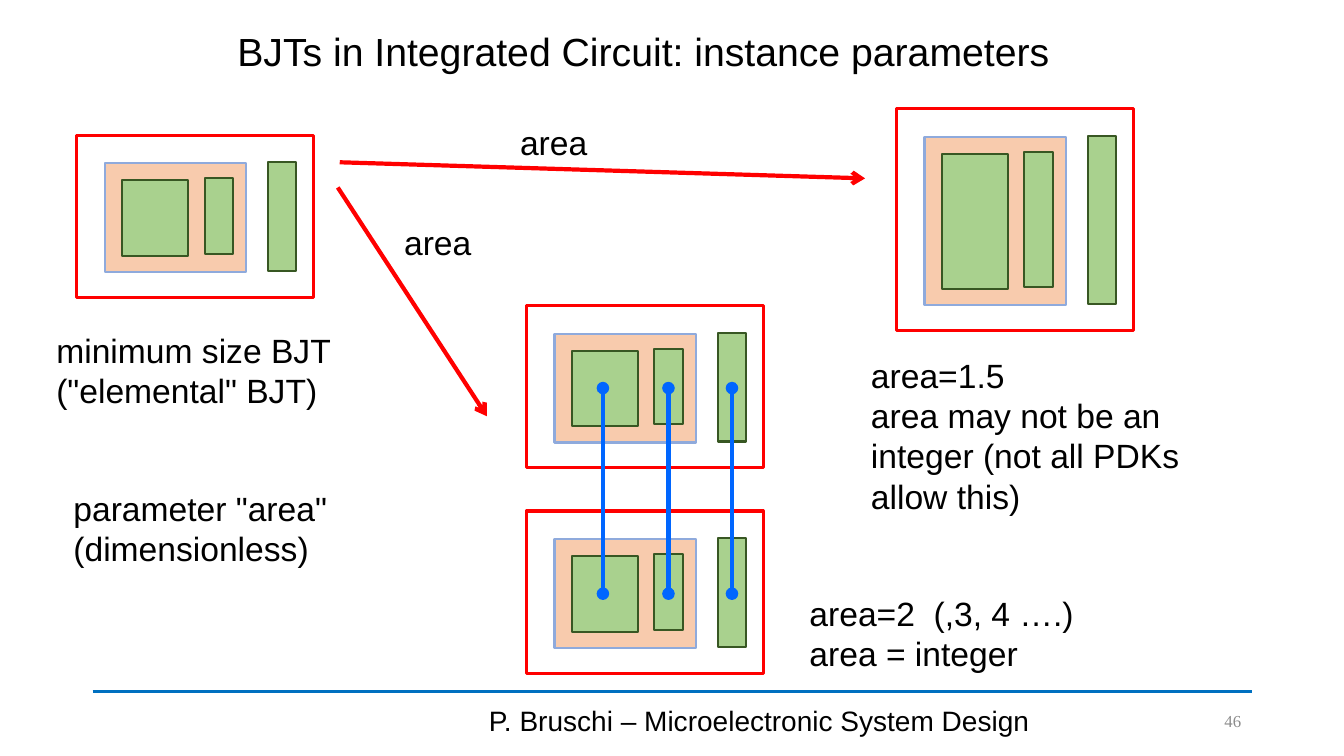
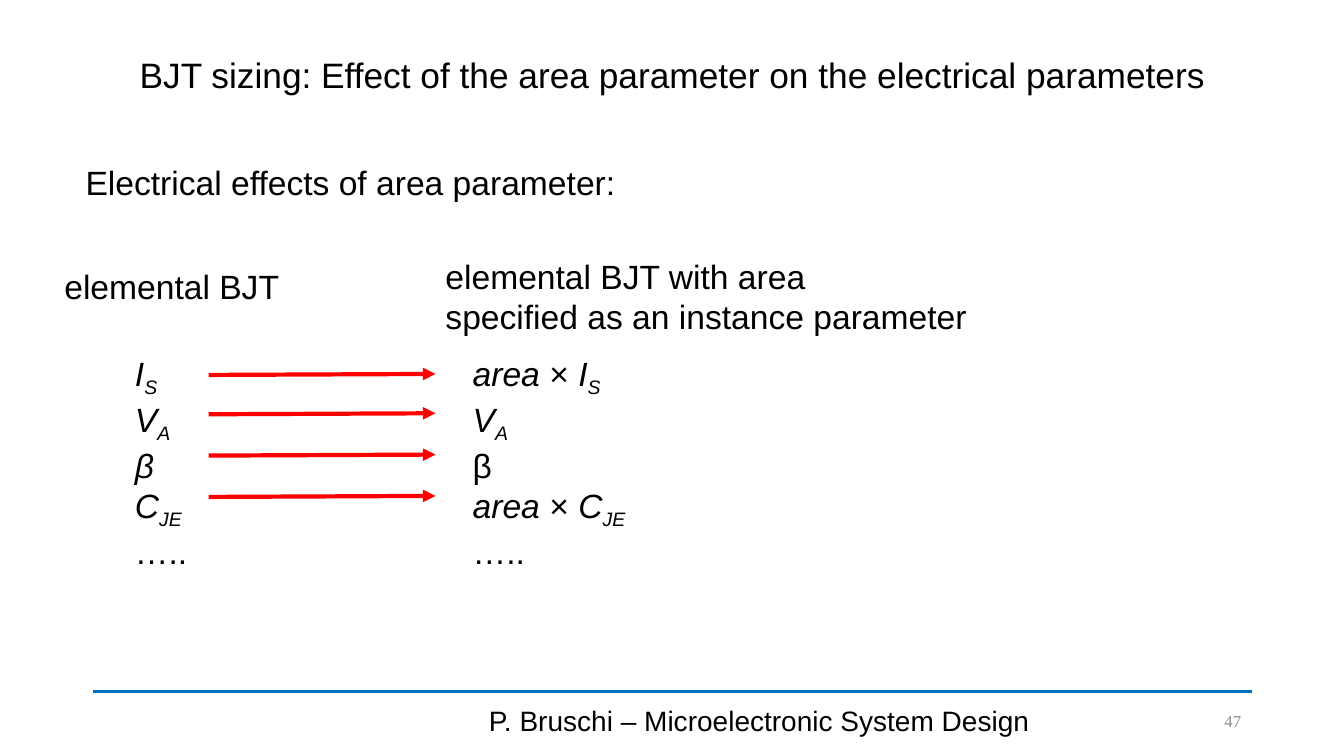
from lxml.etree import SubElement
from pptx import Presentation
from pptx.dml.color import RGBColor
from pptx.enum.shapes import MSO_CONNECTOR, MSO_SHAPE
from pptx.enum.text import MSO_ANCHOR, MSO_AUTO_SIZE, PP_ALIGN
from pptx.oxml.ns import qn
from pptx.util import Pt

PX = 9144
COLORS = {
    "text": "000000", "number": "8C8C8C", "rule": "0070C0",
    "frame": "FF0000", "arrow": "FF0000", "wire": "0066FF",
    "well": "F8CBAD", "well_edge": "8FAADC",
    "contact": "A9D18E", "contact_edge": "385723",
}
FOOTER = "P. Bruschi – Microelectronic System Design"


def px(*lengths):
    """Turn px lengths into EMU."""
    return [length * PX for length in lengths]


def rgb(name):
    """Look up a palette colour."""
    return RGBColor.from_string(COLORS[name])


def write(frame, lines, size=24, font="Arial", color="text",
          align=PP_ALIGN.LEFT, anchor=MSO_ANCHOR.TOP, wrap=False, spacing=None):
    """Fill a frame; a line is a string or (text, style) pairs, i italic and s subscript."""
    frame.word_wrap = wrap
    frame.auto_size = MSO_AUTO_SIZE.NONE if wrap else MSO_AUTO_SIZE.SHAPE_TO_FIT_TEXT
    frame.vertical_anchor = anchor
    for index, line in enumerate(lines):
        paragraph = frame.add_paragraph() if index else frame.paragraphs[0]
        paragraph.alignment = align
        if spacing:
            paragraph.line_spacing = spacing
        for text, style in [(line, "")] if isinstance(line, str) else line:
            run = paragraph.add_run()
            run.text = text
            run.font.size = Pt(size)
            run.font.name = font
            run.font.color.rgb = rgb(color)
            run.font.italic = "i" in style
            if "s" in style:
                run.font._element.set("baseline", "-25000")


def add_text(slide, box, *lines, **style):
    """Add a text box at a px box."""
    write(slide.shapes.add_textbox(*px(*box)).text_frame, lines, **style)


def add_line(slide, start, end, color, width=3, head=None, tail=None):
    """Add a straight line with optional end marks."""
    line = slide.shapes.add_connector(MSO_CONNECTOR.STRAIGHT, *px(*start, *end))
    line.line.color.rgb = rgb(color)
    line.line.width = Pt(width)
    properties = line.element.spPr
    outline = properties.find(qn("a:ln"))
    for tag, mark in (("a:headEnd", head), ("a:tailEnd", tail)):
        if mark:
            SubElement(outline, qn(tag), type=mark)
    SubElement(properties, qn("a:effectLst"))
    return line


def add_rect(slide, box, edge, fill=None, width=1.5):
    """Add an outlined rectangle, filled if a colour is given."""
    rect = slide.shapes.add_shape(MSO_SHAPE.RECTANGLE, *px(*box))
    rect.shadow.inherit = False
    rect.line.color.rgb = rgb(edge)
    rect.line.width = Pt(width)
    if fill:
        rect.fill.solid()
        rect.fill.fore_color.rgb = rgb(fill)
    else:
        rect.fill.background()


def add_transistor(slide, left, top, height=161):
    """Draw a BJT layout whose regions stretch with its height."""
    add_rect(slide, (left, top, 235, height), "frame", width=2.25)
    add_rect(slide, (left + 28, top + 28, 140, height - 53), "well_edge", "well")
    for x, y, width, margin in ((45, 45, 66, 86), (190, 27, 28, 53), (127, 43, 28, 86)):
        add_rect(slide, (left + x, top + y, width, height - margin),
                 "contact_edge", "contact")


def add_parallel_pair(slide, left, top, pitch):
    """Stack two transistors and wire their terminals together."""
    for row in range(2):
        add_transistor(slide, left, top + row * pitch)
    for x in (76, 141, 204):
        start = (left + x, top + 82)
        add_line(slide, start, (start[0], start[1] + pitch), "wire",
                 head="oval", tail="oval")


def add_slide(prs, title, number, title_at, title_size):
    """Start a slide with its title, footer and number."""
    slide = prs.slides.add_slide(prs.slide_layouts[5])
    heading = slide.shapes.title
    heading.left, heading.top, heading.width, heading.height = px(*title_at, 1150, 72)
    centred = {"align": PP_ALIGN.CENTER, "anchor": MSO_ANCHOR.MIDDLE, "wrap": True}
    write(heading.text_frame, [title], size=title_size, spacing=0.9, **centred)
    add_text(slide, (442, 695, 622, 40), FOOTER, size=20, **centred)
    add_text(slide, (1145, 695, 96, 40), str(number), size=12, font="Times New Roman",
             color="number", align=PP_ALIGN.RIGHT, anchor=MSO_ANCHOR.MIDDLE, wrap=True)
    return slide


def add_master_rule(prs, slide):
    """Place the footer rule on the slide master."""
    rule = add_line(slide, (92, 686), (1242, 686), "rule", width=2.75)
    prs.slide_master.element.cSld.spTree.append(rule.element)


def build_instances(prs):
    """Build the slide on instance parameters."""
    slide = add_slide(prs, "BJTs in Integrated Circuit: instance parameters",
                      46, (63, 17), 28)
    add_master_rule(prs, slide)
    add_transistor(slide, 76, 134)
    add_transistor(slide, 889, 108, height=220)
    add_parallel_pair(slide, 522, 303, pitch=204)
    add_line(slide, (337, 161), (858, 177), "arrow", tail="arrow")
    add_line(slide, (335, 186), (483, 413), "arrow", tail="arrow")
    add_text(slide, (46, 322, 295, 91), "minimum size BJT", '("elemental" BJT)')
    add_text(slide, (63, 479, 274, 91), 'parameter "area"', "(dimensionless)")
    for left, top in ((506, 116), (391, 215)):
        add_text(slide, (left, top, 88, 50), "area")
    add_text(slide, (793, 583, 285, 91), "area=2  (,3, 4 ….)", "area = integer")
    add_text(slide, (854, 347, 338, 172), "area=1.5", "area may not be an",
             "integer (not all PDKs", "allow this)")


def build_effects(prs):
    """Build the slide on the electrical effects of area."""
    slide = add_slide(
        prs, "BJT sizing: Effect of the area parameter on the electrical parameters",
        47, (92, 40), 25.2)
    add_text(slide, (75, 156, 560, 50), "Electrical effects of area parameter:")
    add_text(slide, (54, 259, 244, 50), "elemental BJT")
    add_text(slide, (432, 249, 543, 91), "elemental BJT with area",
             "specified as an instance parameter")
    current = [("I", "i"), ("S", "is")]
    voltage = [("V", "i"), ("A", "is")]
    capacitance = [("C", "i"), ("JE", "is")]
    scaled = [("area", "i"), (" × ", "")]
    add_text(slide, (124, 345, 72, 212),
             current, voltage, [("β", "i")], capacitance, "…..")
    add_text(slide, (459, 345, 176, 212),
             scaled + current, voltage, "β", scaled + capacitance, "…..")
    for y in (372, 411, 452, 493):
        add_line(slide, (207, y), (432, y - 1), "arrow", tail="triangle")


def main():
    """Build and save the presentation."""
    prs = Presentation()
    prs.slide_width, prs.slide_height = px(1333, 750)
    build_instances(prs)
    build_effects(prs)
    prs.save("out.pptx")


if __name__ == "__main__":
    main()
